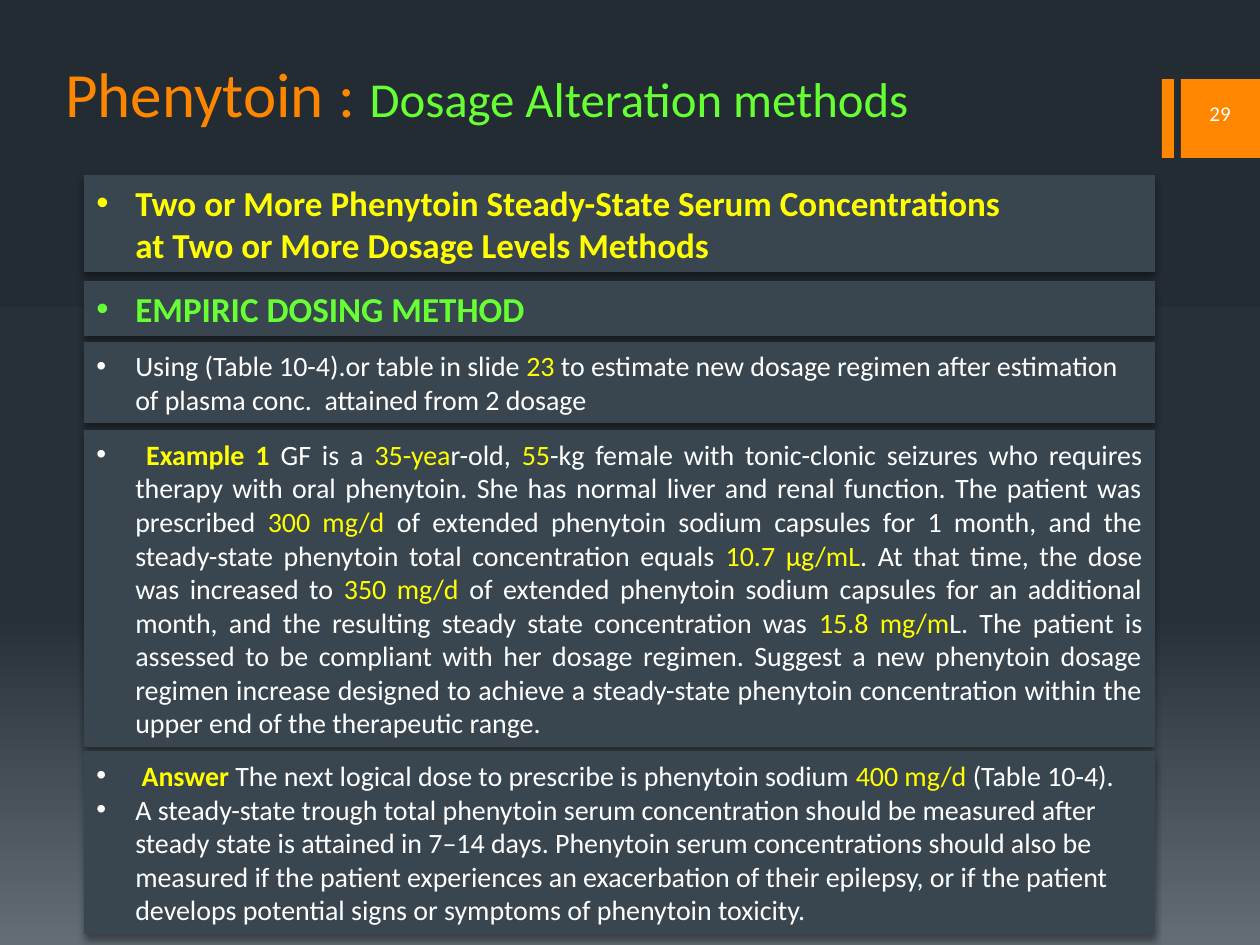
from copy import deepcopy
from dataclasses import dataclass

from lxml import etree
from pptx import Presentation
from pptx.dml.color import RGBColor
from pptx.enum.shapes import MSO_SHAPE
from pptx.enum.text import MSO_ANCHOR, PP_ALIGN
from pptx.oxml.ns import qn
from pptx.util import Emu, Pt

RECTANGLE = MSO_SHAPE.RECTANGLE
MIDDLE, BOTTOM = MSO_ANCHOR.MIDDLE, MSO_ANCHOR.BOTTOM
LEFT, RIGHT, JUSTIFY = PP_ALIGN.LEFT, PP_ALIGN.RIGHT, PP_ALIGN.JUSTIFY

ORANGE = RGBColor(0xFF, 0x86, 0x00)
GREEN = RGBColor(0x66, 0xFF, 0x33)
YELLOW = RGBColor(0xFF, 0xFF, 0x00)
WHITE = RGBColor(0xFF, 0xFF, 0xFF)
SLATE = RGBColor(0x39, 0x46, 0x50)
BACKGROUND_STOPS = [
    (0, RGBColor(0x24, 0x2C, 0x33)),
    (0.65, RGBColor(0x27, 0x30, 0x37)),
    (1, RGBColor(0x63, 0x6D, 0x76)),
]

FONT = "Calibri"
EMU_PER_PX = 914400 / 126
PANEL_LEFT, PANEL_WIDTH = 84, 1071
INDENT = 39


@dataclass
class Span:
    text: str
    color: RGBColor = WHITE
    bold: bool = False
    size: float | None = None


@dataclass
class Para:
    spans: list[Span]
    bullet: bool = True


@dataclass
class Panel:
    top: int
    height: int
    paras: list[Para]
    size: int = 16
    align: PP_ALIGN = LEFT


def px(length: int) -> Emu:
    return Emu(round(length * EMU_PER_PX))


def marked(text: str) -> list[Span]:
    """Split text at bars: every second piece is yellow."""
    pieces = text.split("|")
    return [Span(piece, YELLOW if i % 2 else WHITE) for i, piece in enumerate(pieces)]


def write_text(frame, paras: list[Para], *, size: float, align=LEFT, anchor=MIDDLE,
               indent: int = 0) -> None:
    frame.word_wrap = True
    frame.vertical_anchor = anchor
    for i, para in enumerate(paras):
        line = frame.paragraphs[0] if i == 0 else frame.add_paragraph()
        line.alignment = align
        properties = line._p.get_or_add_pPr()
        if indent:
            properties.set("marL", str(px(indent)))
        if indent and para.bullet:
            properties.set("indent", str(-px(indent)))
            etree.SubElement(properties, qn("a:buFont"), typeface="Arial")
            etree.SubElement(properties, qn("a:buChar"), char="•")
        for span in para.spans:
            run = line.add_run()
            run.text = span.text
            run.font.name = FONT
            run.font.size = Pt(span.size or size)
            run.font.bold = span.bold
            run.font.color.rgb = span.color


def add_rectangle(slide, left: int, top: int, width: int, height: int, color: RGBColor):
    box = slide.shapes.add_shape(RECTANGLE, px(left), px(top), px(width), px(height))
    box.shadow.inherit = False
    box.fill.solid()
    box.fill.fore_color.rgb = color
    box.line.fill.background()
    return box


def add_drop_shadow(box) -> None:
    effects = box._element.spPr.find(qn("a:effectLst"))
    shadow = etree.SubElement(effects, qn("a:outerShdw"), blurRad=str(Pt(4)),
                              dist=str(Pt(3)), dir="5400000", rotWithShape="0")
    color = etree.SubElement(shadow, qn("a:srgbClr"), val="000000")
    etree.SubElement(color, qn("a:alpha"), val="40000")


def add_panel(slide, panel: Panel) -> None:
    box = add_rectangle(slide, PANEL_LEFT, panel.top, PANEL_WIDTH, panel.height, SLATE)
    add_drop_shadow(box)
    write_text(box.text_frame, panel.paras, size=panel.size, align=panel.align,
               indent=INDENT)


def add_label(slide, left: int, top: int, width: int, height: int, spans: list[Span],
              **text_format) -> None:
    box = slide.shapes.add_textbox(px(left), px(top), px(width), px(height))
    write_text(box.text_frame, [Para(spans)], **text_format)


def paint_background(slide) -> None:
    fill = slide.background.fill
    fill.gradient()
    fill.gradient_angle = 270
    stop_list = next(slide._element.iter(qn("a:gsLst")))
    stop_list.append(deepcopy(stop_list[0]))
    for stop, (position, color) in zip(fill.gradient_stops, BACKGROUND_STOPS):
        stop.position = position
        stop.color.rgb = color


EXAMPLE = (
    "GF is a |35-yea|r-old, |55|-kg female with tonic-clonic seizures who requires "
    "therapy with oral phenytoin. She has normal liver and renal function. The patient "
    "was prescribed |300 mg/d |of extended phenytoin sodium capsules for 1 month, and "
    "the steady-state phenytoin total concentration equals |10.7 μg/mL|. At that time, "
    "the dose was increased to |350 mg/d |of extended phenytoin sodium capsules for an "
    "additional month, and the resulting steady state concentration was |15.8 mg/m|L. "
    "The patient is assessed to be compliant with her dosage regimen. Suggest a new "
    "phenytoin dosage regimen increase designed to achieve a steady-state phenytoin "
    "concentration within the upper end of the therapeutic range."
)
FOLLOW_UP = (
    "A steady-state trough total phenytoin serum concentration should be measured after "
    "steady state is attained in 7–14 days. Phenytoin serum concentrations should also "
    "be measured if the patient experiences an exacerbation of their epilepsy, or if the "
    "patient develops potential signs or symptoms of phenytoin toxicity."
)
PANELS = [
    Panel(175, 97, [
        Para([Span("Two or More Phenytoin Steady-State Serum Concentrations", YELLOW, True)]),
        Para([Span("at Two or More Dosage Levels Methods", YELLOW, True)], bullet=False),
    ], size=20),
    Panel(281, 55, [Para([Span("EMPIRIC DOSING METHOD", GREEN, True)])], size=20),
    Panel(342, 81, [Para(marked(
        "Using (Table 10-4).or table in slide |23| to estimate new dosage regimen after "
        "estimation of plasma conc.  attained from 2 dosage"))]),
    Panel(430, 317, [
        Para([Span(" "), Span("Example 1 ", YELLOW, True), *marked(EXAMPLE)]),
    ], align=JUSTIFY),
    Panel(751, 183, [
        Para([Span(" "), Span("Answer ", YELLOW, True), *marked(
            "The next logical dose to prescribe is phenytoin sodium |400 mg/d |(Table 10-4).")]),
        Para([Span(FOLLOW_UP)]),
    ]),
]


def main() -> None:
    deck = Presentation()
    deck.slide_width, deck.slide_height = px(1260), px(945)
    page = deck.slides.add_slide(deck.slide_layouts[6])
    paint_background(page)

    # Page number tab
    add_rectangle(page, 1162, 79, 12, 79, ORANGE)
    add_rectangle(page, 1181, 79, 79, 79, ORANGE)
    add_label(page, 1176, 95, 67, 37, [Span("29")], size=12, align=RIGHT)

    # Title
    title = [Span("Phenytoin : ", ORANGE), Span("Dosage Alteration methods", GREEN, size=27.9)]
    add_label(page, 53, 42, 1071, 94, title, size=36, anchor=BOTTOM)

    # Text panels
    for panel in PANELS:
        add_panel(page, panel)

    deck.save("out.pptx")


if __name__ == "__main__":
    main()
